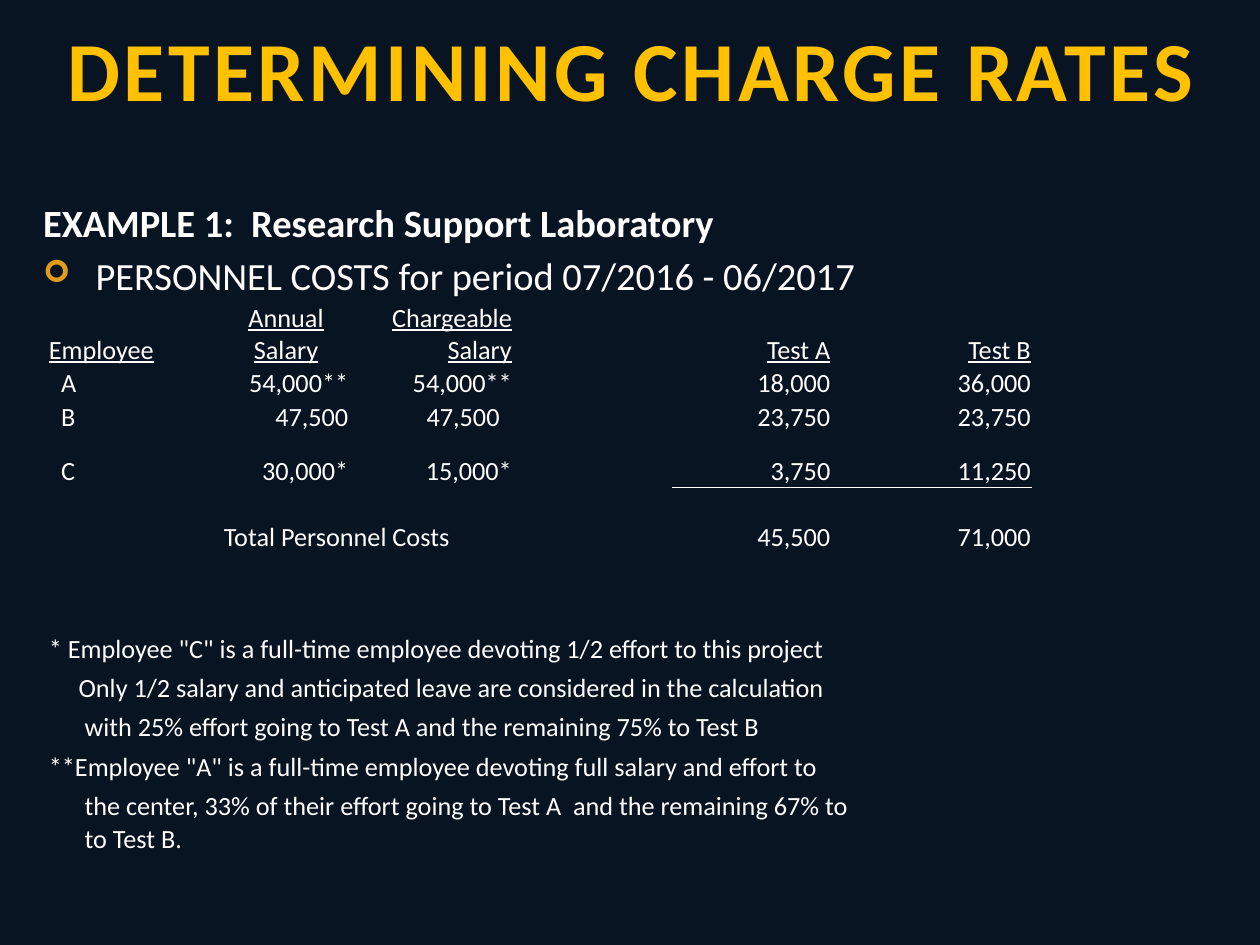
from dataclasses import dataclass

from lxml import etree
from pptx import Presentation
from pptx.dml.color import RGBColor
from pptx.enum import text
from pptx.oxml import ns
from pptx.util import Pt

NAVY = RGBColor(0x08, 0x14, 0x22)
GOLD = RGBColor(0xFF, 0xC0, 0x00)
ORANGE = RGBColor(0xE1, 0x9C, 0x1E)
WHITE = RGBColor(0xFF, 0xFF, 0xFF)
FONT = "Calibri"
LEFT, CENTER, RIGHT = text.PP_ALIGN.LEFT, text.PP_ALIGN.CENTER, text.PP_ALIGN.RIGHT

COLS = (100, 72.5, 93.5, 91, 91, 114.5, 91)
ROWS = (18, 37, 19, 19, 31, 18.5, 18.5, 19) + (22.5,) * 6 + (19,)
PAD = 0.7
SMALL_INDENT = 7
NO_STYLE = "{2D5ABB26-0587-4C30-8999-92F81FD0307C}"


@dataclass
class Entry:
    row: int
    col: int
    words: str
    align: text.PP_ALIGN = RIGHT
    underline: bool = False
    left: float = 0
    right: float = 0
    rows: int = 1
    cols: int = 1


HEADERS = [
    Entry(1, 0, "Employee", LEFT, True),
    Entry(0, 1, "Annual Salary", CENTER, True, rows=2),
    Entry(1, 2, "Chargeable Salary", RIGHT, True),
    Entry(0, 4, "Test A", RIGHT, True, rows=2),
    Entry(0, 5, "Test B", RIGHT, True, rows=2),
]
# Employee, annual salary, chargeable salary, Test A, Test B
EMPLOYEES = [
    ("A", "54,000**", "54,000**", "18,000", "36,000"),
    ("B", "47,500", "47,500", "23,750", "23,750"),
    ("C", "30,000*", "15,000*", "3,750", "11,250"),
]
TOTALS = [
    Entry(6, 1, "Total Personnel Costs", LEFT, cols=3),
    Entry(6, 4, "45,500"),
    Entry(6, 5, "71,000"),
]
# Wording, indent, columns spanned
NOTES = [
    ('* Employee "C" is a full-time employee devoting 1/2 effort to this project', 0, 7),
    ("Only 1/2 salary and anticipated leave are considered in the calculation", 17, 7),
    ("with 25% effort going to Test A and the remaining 75% to Test B", 20.4, 7),
    ('**Employee "A" is a full-time employee devoting full salary and effort to', 0, 7),
    ("the center, 33% of their effort going to Test A  and the remaining 67% to", 20.4, 7),
    ("to Test B.", 20.4, 3),
]


def add_run(p, words: str, size: float, color=WHITE, bold=False, underline=False):
    r = p.add_run()
    r.text = words
    f = r.font
    f.name, f.size, f.bold, f.underline = FONT, Pt(size), bold, underline
    f.color.rgb = color
    return r


def place(sp, left, top, width, height, margins) -> None:
    sp.left, sp.top, sp.width, sp.height = map(Pt, (left, top, width, height))
    tf = sp.text_frame
    tf.word_wrap = True
    tf.auto_size = text.MSO_AUTO_SIZE.NONE
    tf.margin_left, tf.margin_top, tf.margin_right, tf.margin_bottom = map(Pt, margins)


def sub(parent, tag: str, **attrs):
    return etree.SubElement(parent, ns.qn(tag), attrs)


def set_bullet(p, char: str = "") -> None:
    pPr = p._p.get_or_add_pPr()
    pPr.set("marL", str(Pt(33)))
    pPr.set("indent", str(-Pt(30)))
    if char:
        sub(sub(pPr, "a:buClr"), "a:srgbClr", val=str(ORANGE))
        sub(pPr, "a:buSzPct", val="80000")
        sub(pPr, "a:buFont", typeface="Wingdings")
        sub(pPr, "a:buChar", char=char)
    else:
        sub(pPr, "a:buNone")


def clear_cell(cell) -> None:
    cell.fill.background()
    cell.margin_left = cell.margin_right = cell.margin_top = Pt(PAD)
    cell.margin_bottom = 0
    cell.vertical_anchor = text.MSO_ANCHOR.BOTTOM


def fill_cell(table, e: Entry) -> None:
    cell = table.cell(e.row, e.col)
    if e.rows * e.cols > 1:
        cell.merge(table.cell(e.row + e.rows - 1, e.col + e.cols - 1))
    cell.margin_left = Pt(PAD + e.left)
    cell.margin_right = Pt(PAD + e.right)
    p = cell.text_frame.paragraphs[0]
    p.alignment = e.align
    add_run(p, e.words, 15, underline=e.underline)


def rule_below(cell) -> None:
    ln = etree.Element(ns.qn("a:lnB"), {"w": str(Pt(1))})
    sub(sub(ln, "a:solidFill"), "a:srgbClr", val=str(WHITE))
    cell._tc.get_or_add_tcPr().insert(0, ln)


def salary_entries() -> list[Entry]:
    entries = []
    for row, (name, *amounts) in enumerate(EMPLOYEES, 2):
        entries.append(Entry(row, 0, name, LEFT, left=SMALL_INDENT))
        for col, amount in zip((1, 2, 4, 5), amounts):
            # Unmarked chargeable salary lines up with the starred ones
            gap = SMALL_INDENT if col == 2 and not amount.endswith("*") else 0
            entries.append(Entry(row, col, amount, right=gap))
    return entries


def add_cost_table(s) -> None:
    frame = s.shapes.add_table(len(ROWS), len(COLS), Pt(27.25), Pt(154),
                               Pt(sum(COLS)), Pt(sum(ROWS)))
    table = frame.table
    table.first_row = table.horz_banding = False
    table._tbl.tblPr.find(ns.qn("a:tableStyleId")).text = NO_STYLE
    for column, width in zip(table.columns, COLS):
        column.width = Pt(width)
    for row, height in zip(table.rows, ROWS):
        row.height = Pt(height)
    for cell in table.iter_cells():
        clear_cell(cell)
    notes = [Entry(row, 0, words, LEFT, left=indent, cols=cols)
             for row, (words, indent, cols) in enumerate(NOTES, 9)]
    for entry in HEADERS + salary_entries() + TOTALS + notes:
        fill_cell(table, entry)
    for col in (4, 5):
        rule_below(table.cell(4, col))
    # Small type in empty cells keeps the row heights
    for cell in table.iter_cells():
        if not cell.text_frame.text:
            sub(cell.text_frame.paragraphs[0]._p, "a:endParaRPr", sz="1000")


def main() -> None:
    prs = Presentation()
    prs.slide_width, prs.slide_height = Pt(720), Pt(540)
    s = prs.slides.add_slide(prs.slide_layouts[1])
    s.background.fill.solid()
    s.background.fill.fore_color.rgb = NAVY

    # Title
    title, body = s.placeholders
    place(title, 0, 0, 720, 78, (21.6, 3.6, 20, 3.6))
    title.text_frame.vertical_anchor = text.MSO_ANCHOR.MIDDLE
    p = title.text_frame.paragraphs[0]
    p.alignment = CENTER
    r = add_run(p, "DETERMINING CHARGE RATES", 48, GOLD, bold=True)
    r._r.get_or_add_rPr().set("spc", "200")

    # Example heading and bullet
    place(body, 0, 78.5, 720, 406.5, (21.6, 35, 21.6, 3.6))
    tf = body.text_frame
    p = tf.paragraphs[0]
    set_bullet(p)
    p.space_before = Pt(0)
    add_run(p, "EXAMPLE 1:  Research Support Laboratory", 22, bold=True)
    p = tf.add_paragraph()
    set_bullet(p, "➢")
    p.space_before = Pt(4.4)
    add_run(p, "PERSONNEL COSTS for period 07/2016 - 06/2017", 22)

    # Personnel costs and notes
    add_cost_table(s)
    prs.save("out.pptx")


if __name__ == "__main__":
    main()
